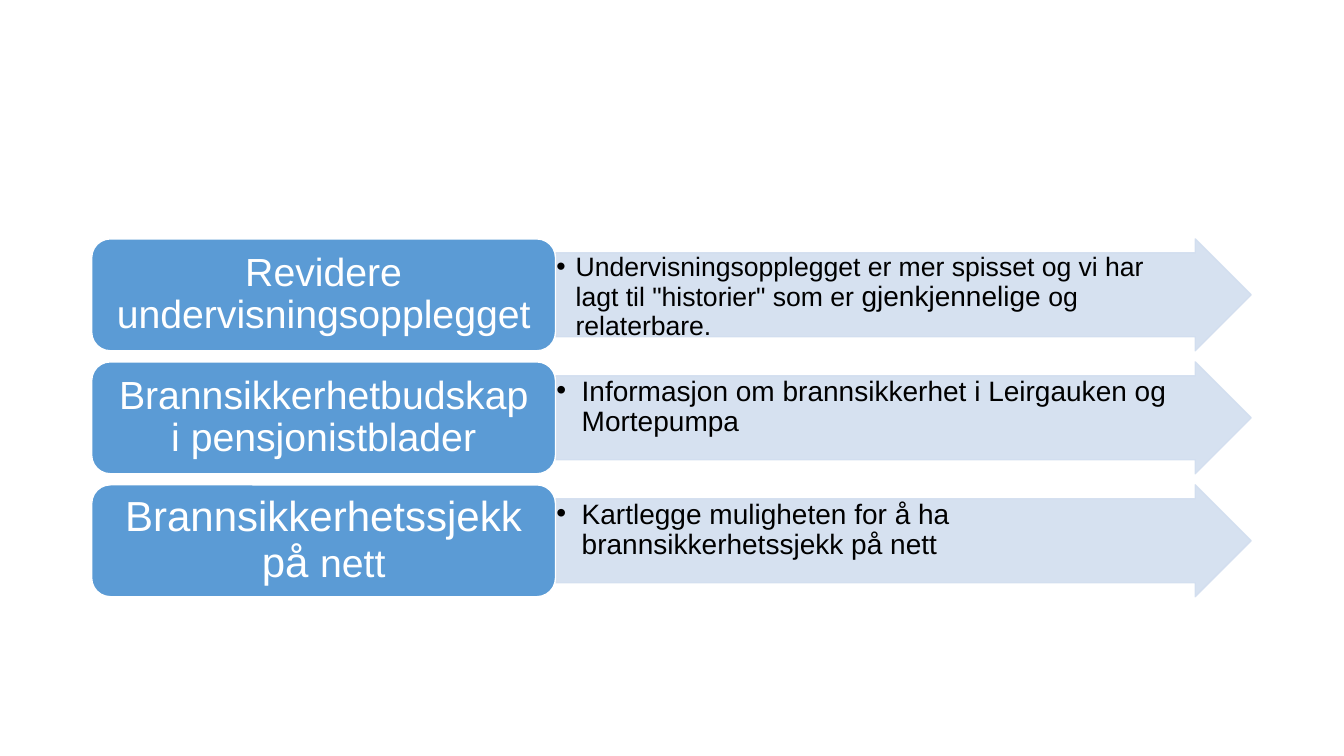
"""Build a slide of three measures, each a label with an arrow of details."""
from lxml import etree
from pptx import Presentation
from pptx.dml.color import RGBColor
from pptx.enum.shapes import MSO_SHAPE
from pptx.enum.text import MSO_ANCHOR, PP_ALIGN
from pptx.oxml.ns import qn
from pptx.util import Inches, Pt

ARROW = MSO_SHAPE.RIGHT_ARROW
ROUNDED = MSO_SHAPE.ROUNDED_RECTANGLE
TOP, MIDDLE = MSO_ANCHOR.TOP, MSO_ANCHOR.MIDDLE
LEFT, CENTER = PP_ALIGN.LEFT, PP_ALIGN.CENTER

BLUE = RGBColor(0x5B, 0x9B, 0xD5)
PALE_BLUE = RGBColor(0xD2, 0xDE, 0xEF)
WHITE = RGBColor(0xFF, 0xFF, 0xFF)
BLACK = RGBColor(0x00, 0x00, 0x00)

FONT = "Arial"
LABEL_LEFT, LABEL_WIDTH = 0.91, 4.6
ARROW_LEFT, ARROW_WIDTH = LABEL_LEFT + LABEL_WIDTH, 6.9
FIRST_TOP, ROW_HEIGHT, ROW_STEP = 2.37, 1.11, 1.22

MEASURES = [
    ([("Revidere undervisningsopplegget", 28)],
     [("Undervisningsopplegget er mer spisset og vi har lagt til \"historier\" som er ", 19),
      ("gjenkjennelige", 20), (" og relaterbare.", 19)], 0.19),
    ([("Brannsikkerhetbudskap i pensjonistblader", 28)],
     [("Informasjon om brannsikkerhet i Leirgauken og Mortepumpa", 20)], 0.25),
    ([("Brannsikkerhetssjekk på ", 30), ("nett", 28)],
     [("Kartlegge muligheten for å ha brannsikkerhetssjekk på nett", 20)], 0.25),
]


def add_block(slide, preset, left, top, width, fill, line):
    """Add a filled, outlined preset shape one row high."""
    block = slide.shapes.add_shape(
        preset, Inches(left), Inches(top), Inches(width), Inches(ROW_HEIGHT))
    block.shadow.inherit = False
    block.fill.solid()
    block.fill.fore_color.rgb = fill
    block.line.color.rgb = line
    block.line.width = Pt(1)
    return block


def set_margins(frame, left, top, right, bottom):
    """Set the inner margins of a text frame in inches."""
    frame.margin_left, frame.margin_top = Inches(left), Inches(top)
    frame.margin_right, frame.margin_bottom = Inches(right), Inches(bottom)


def write_text(frame, pieces, color, anchor, alignment):
    """Write sized pieces of text into the first paragraph of a frame."""
    frame.word_wrap = True
    frame.vertical_anchor = anchor
    paragraph = frame.paragraphs[0]
    paragraph.alignment = alignment
    paragraph.line_spacing = 0.9
    for wording, size in pieces:
        run = paragraph.add_run()
        run.text = wording
        run.font.name = FONT
        run.font.size = Pt(size)
        run.font.color.rgb = color


def add_bullet(paragraph, indent):
    """Give a paragraph a round bullet with a hanging indent."""
    properties = paragraph._p.get_or_add_pPr()
    properties.set("marL", str(Inches(indent)))
    properties.set("indent", str(-Inches(indent)))
    etree.SubElement(properties, qn("a:buFont")).set("typeface", FONT)
    etree.SubElement(properties, qn("a:buChar")).set("char", "•")


def make_translucent(block, percent):
    """Set the opacity of the fill and line of a shape."""
    for color in block._element.spPr.iter(qn("a:srgbClr")):
        etree.SubElement(color, qn("a:alpha")).set("val", str(percent * 1000))


def add_details(slide, top, pieces, indent):
    """Add the pale arrow with its bulleted details."""
    arrow = add_block(slide, ARROW, ARROW_LEFT, top, ARROW_WIDTH, PALE_BLUE, PALE_BLUE)
    arrow.adjustments[0] = 0.75
    arrow.adjustments[1] = 0.5
    make_translucent(arrow, 90)
    set_margins(arrow.text_frame, 0.01, 0.01, 0.29, 0.01)
    write_text(arrow.text_frame, pieces, BLACK, TOP, LEFT)
    add_bullet(arrow.text_frame.paragraphs[0], indent)


def add_label(slide, top, pieces):
    """Add the blue rounded label of a measure."""
    label = add_block(slide, ROUNDED, LABEL_LEFT, top, LABEL_WIDTH, BLUE, WHITE)
    set_margins(label.text_frame, 0.12, 0.06, 0.12, 0.06)
    write_text(label.text_frame, pieces, WHITE, MIDDLE, CENTER)


def main():
    """Build and save the slide."""
    deck = Presentation()
    deck.slide_width, deck.slide_height = Inches(13.33), Inches(7.5)
    slide = deck.slides.add_slide(deck.slide_layouts[6])
    for row, (label, details, indent) in enumerate(MEASURES):
        top = FIRST_TOP + row * ROW_STEP
        add_details(slide, top, details, indent)
        add_label(slide, top, label)
    deck.save("out.pptx")


if __name__ == "__main__":
    main()
